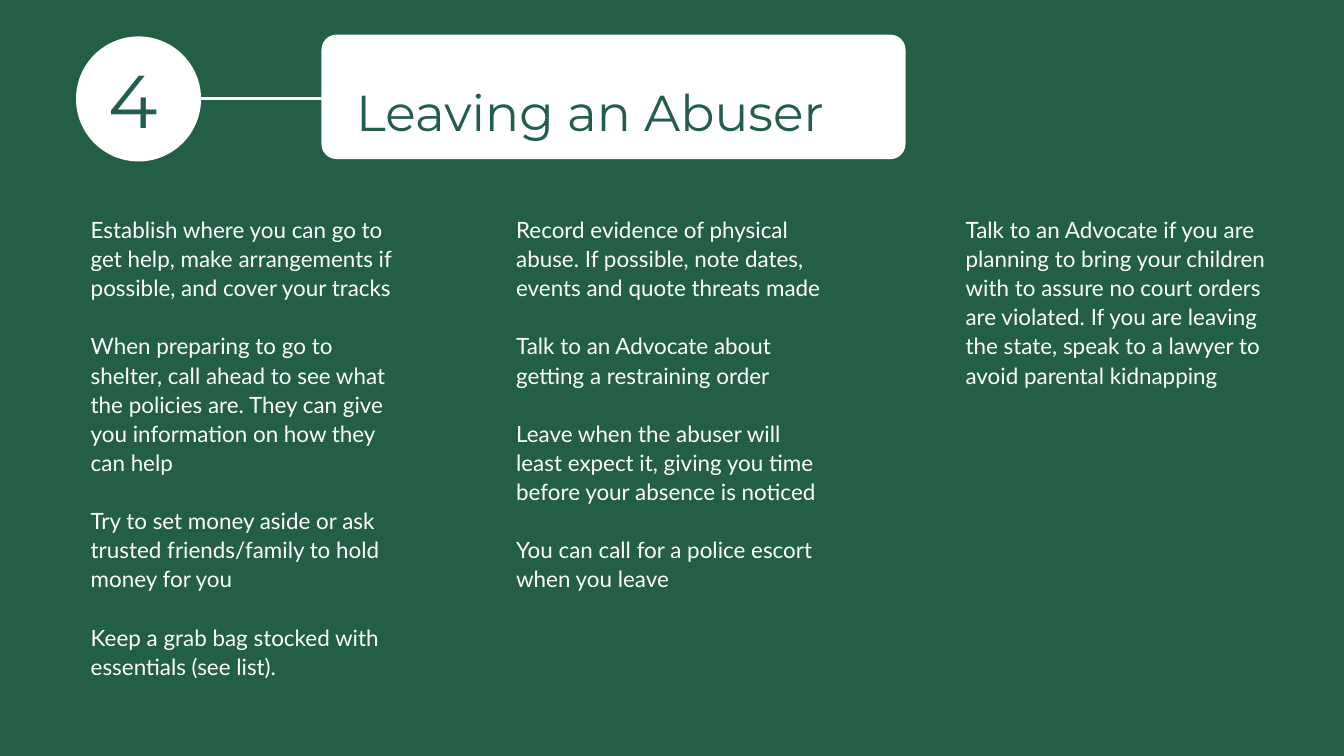
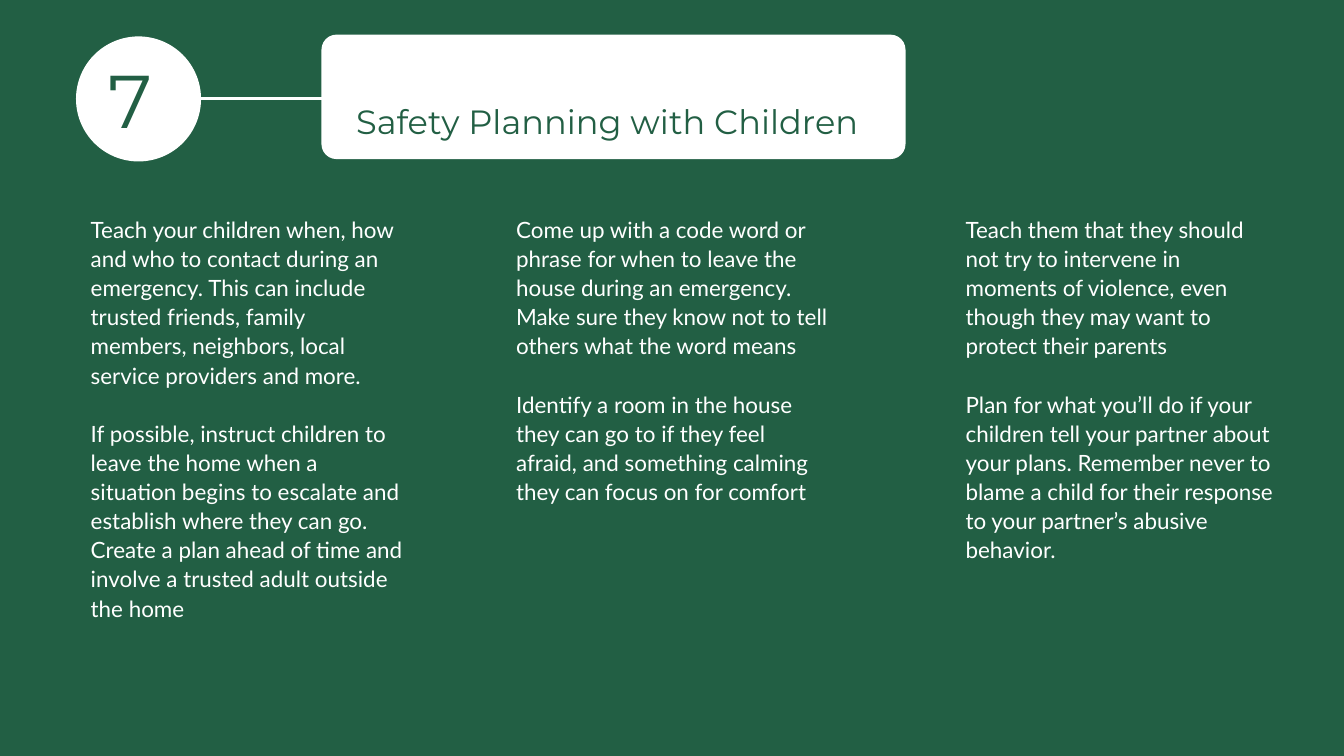
"""Build two safety planning slides with numbered headers and three text columns."""
from lxml.etree import SubElement
from pptx import Presentation
from pptx.dml.color import RGBColor
from pptx.enum.shapes import MSO_CONNECTOR, MSO_SHAPE
from pptx.enum.text import MSO_ANCHOR, MSO_AUTO_SIZE, PP_ALIGN
from pptx.oxml.ns import qn
from pptx.util import Pt

COLORS = {"green": "225F44", "white": "FFFFFF"}
HEADING_FONT, BODY_FONT = "Montserrat", "Lato"
HEADING_LINE, BODY_LINE = 96, 31.2
COLUMN_LEFTS = (97.2, 553, 1034.6)
COLUMN_TOP, COLUMN_WIDTH = 229, 334

TOPICS = [
    {
        "number": "4",
        "title": "Leaving an Abuser",
        "title_size": 54,
        "columns": [
            (17, [
                "Establish where you can go to get help, make arrangements if possible, and cover your tracks",
                "When preparing to go to shelter, call ahead to see what the policies are. "
                "They can give you information on how they can help",
                "Try to set money aside or ask trusted friends/family to hold money for you",
                "Keep a grab bag stocked with essentials (see list).",
            ]),
            (17, [
                "Record evidence of physical abuse. If possible, note dates, events and quote threats made",
                "Talk to an Advocate about getting a restraining order",
                "Leave when the abuser will least expect it, giving you time before your absence is noticed",
                "You can call for a police escort when you leave",
            ]),
            (7, [
                "Talk to an Advocate if you are planning to bring your children with to assure no court "
                "orders are violated. If you are leaving the state, speak to a lawyer to avoid parental "
                "kidnapping",
            ]),
        ],
    },
    {
        "number": "7",
        "title": "Safety Planning with Children",
        "title_size": 36,
        "columns": [
            (15, [
                "Teach your children when, how and who to contact during an emergency. This can include "
                "trusted friends, family members, neighbors, local service providers and more.",
                "If possible, instruct children to leave the home when a situation begins to escalate and "
                "establish where they can go. Create a plan ahead of time and involve a trusted adult "
                "outside the home",
            ]),
            (12, [
                "Come up with a code word or phrase for when to leave the house during an emergency. "
                "Make sure they know not to tell others what the word means",
                "Identify a room in the house they can go to if they feel afraid, and something calming "
                "they can focus on for comfort",
            ]),
            (13, [
                "Teach them that they should not try to intervene in moments of violence, even though "
                "they may want to protect their parents",
                "Plan for what you’ll do if your children tell your partner about your plans. Remember "
                "never to blame a child for their response to your partner’s abusive behavior.",
            ]),
        ],
    },
]


class Deck:
    def __init__(self):
        self.presentation = Presentation()
        self.presentation.slide_width, self.presentation.slide_height = Pt(1440), Pt(810)
        background = self.presentation.slide_master.background.fill
        background.solid()
        background.fore_color.rgb = self.color("green")
        self.slide = None

    def color(self, name):
        return RGBColor.from_string(COLORS[name])

    def add_slide(self):
        self.slide = self.presentation.slides.add_slide(self.presentation.slide_layouts[5])

    def set_text(self, shape, texts, font_name, size, color, line, gap=0, align=PP_ALIGN.LEFT):
        frame = shape.text_frame
        frame.text = "\n".join(texts)
        frame.word_wrap = True
        frame.auto_size = MSO_AUTO_SIZE.NONE
        frame.vertical_anchor = MSO_ANCHOR.TOP
        frame.margin_left = frame.margin_right = frame.margin_top = frame.margin_bottom = 0
        for paragraph in frame.paragraphs:
            paragraph.alignment = align
            paragraph.line_spacing = Pt(line)
            paragraph.space_before, paragraph.space_after = Pt(0), Pt(gap)
            paragraph.font.name, paragraph.font.size = font_name, Pt(size)
            paragraph.font.color.rgb = self.color(color)

    def panel(self, kind, left, top, width, height, line_width=0):
        shape = self.slide.shapes.add_shape(kind, Pt(left), Pt(top), Pt(width), Pt(height))
        shape.shadow.inherit = False
        shape.fill.solid()
        shape.fill.fore_color.rgb = self.color("white")
        if line_width:
            shape.line.color.rgb = self.color("white")
            shape.line.width = Pt(line_width)
        else:
            shape.line.fill.background()
        return shape

    def link(self, start, end, y):
        connector = self.slide.shapes.add_connector(
            MSO_CONNECTOR.STRAIGHT, Pt(start), Pt(y), Pt(end), Pt(y))
        connector.line.color.rgb = self.color("white")
        connector.line.width = Pt(3)
        SubElement(connector.element.spPr, qn("a:effectLst"))

    def title(self, text, size):
        title = self.slide.shapes.title
        title.left, title.top, title.width, title.height = Pt(381.6), Pt(55.4), Pt(567.4), Pt(86)
        self.set_text(title, [text], HEADING_FONT, size, "green", HEADING_LINE, align=PP_ALIGN.JUSTIFY)
        title.element.getparent().append(title.element)

    def text_box(self, left, top, width, height, texts, *style, **options):
        box = self.slide.shapes.add_textbox(Pt(left), Pt(top), Pt(width), Pt(height))
        self.set_text(box, texts, *style, **options)

    def header(self, number, title, title_size):
        card = self.panel(MSO_SHAPE.ROUNDED_RECTANGLE, 346.3, 39, 622, 129.6, 3.75)
        card.adjustments[0] = 0.11
        self.panel(MSO_SHAPE.OVAL, 81.4, 39, 134, 134)
        self.link(167, 349, 105.8)
        self.title(title, title_size)
        self.text_box(116.6, 57.6, 60, 97, [number], HEADING_FONT, 80, "green", HEADING_LINE,
                      align=PP_ALIGN.JUSTIFY)

    def columns(self, columns):
        for left, (line_count, texts) in zip(COLUMN_LEFTS, columns):
            self.text_box(left, COLUMN_TOP, COLUMN_WIDTH, line_count * BODY_LINE, texts,
                          BODY_FONT, 24, "white", BODY_LINE, gap=BODY_LINE)


def main():
    deck = Deck()
    for topic in TOPICS:
        deck.add_slide()
        deck.header(topic["number"], topic["title"], topic["title_size"])
        deck.columns(topic["columns"])
    deck.presentation.save("out.pptx")


if __name__ == "__main__":
    main()
